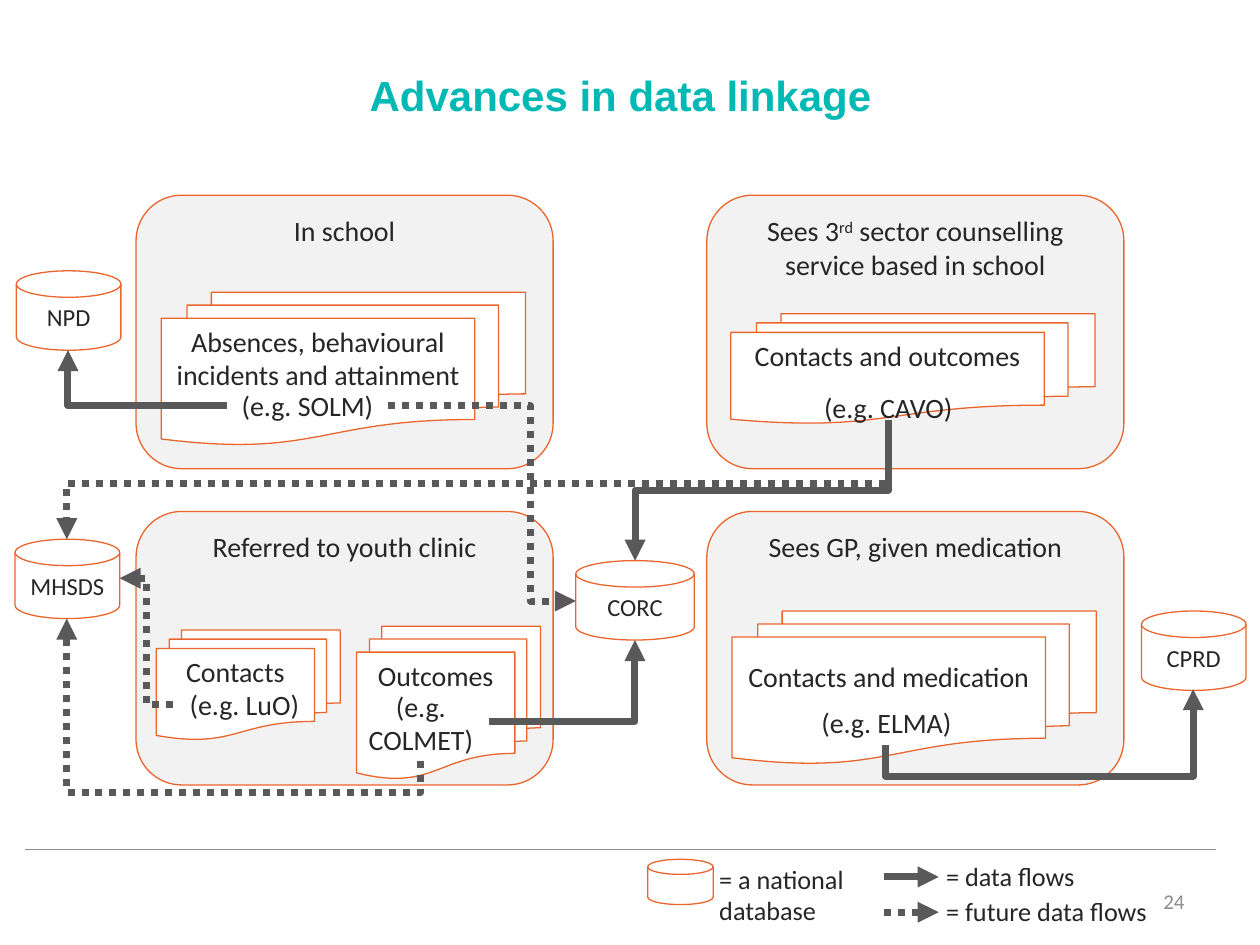
from lxml import etree
from pptx import Presentation
from pptx import util as u
from pptx.dml.color import RGBColor
from pptx.enum import dml, shapes, text
from pptx.oxml import ns

ORANGE = RGBColor(0xEA, 0x65, 0x2C)
TEAL = RGBColor(0x00, 0xB9, 0xB5)
INK = RGBColor(0x26, 0x26, 0x26)
FLOW = RGBColor(0x59, 0x59, 0x59)
MUTED = RGBColor(0x8C, 0x8C, 0x8C)
PANEL = RGBColor(0xF2, 0xF2, 0xF2)
WHITE = RGBColor(0xFF, 0xFF, 0xFF)

KIND = shapes.MSO_SHAPE
ALIGN = text.PP_ALIGN
ANCHOR = text.MSO_ANCHOR
PANEL_SIZE = (3.31, 2.17)
DISK_SIZE = (0.83, 0.63)
INSET = 0.04


def write(box, content, size=16, colour=INK, font="Calibri", bold=False,
          align=ALIGN.CENTER, anchor=ANCHOR.TOP, inset=(INSET,) * 4):
    frame = box.text_frame
    frame.word_wrap = True
    frame.vertical_anchor = anchor
    (frame.margin_left, frame.margin_top,
     frame.margin_right, frame.margin_bottom) = map(u.Inches, inset)
    para = frame.paragraphs[0]
    para.alignment = align
    spans = [content] if isinstance(content, str) else content
    for index, words in enumerate(spans):
        span = para.add_run()
        span.text = words
        span.font.name = font
        span.font.size = u.Pt(size)
        span.font.bold = bold
        span.font.color.rgb = colour
        if index == 1:
            span.font._element.set("baseline", "30000")


def add_label(page, place, content, **style):
    box = page.shapes.add_textbox(*map(u.Inches, place))
    write(box, content, **style)


def add_outline(page, kind, place, fill=None):
    shape = page.shapes.add_shape(kind, *map(u.Inches, place))
    shape.shadow.inherit = False
    if fill is None:
        shape.fill.background()
    else:
        shape.fill.solid()
        shape.fill.fore_color.rgb = fill
    shape.line.color.rgb = ORANGE
    shape.line.width = u.Pt(0.75)
    return shape


def add_panel(page, corner, heading):
    shape = add_outline(page, KIND.ROUNDED_RECTANGLE, corner + PANEL_SIZE, PANEL)
    write(shape, heading)


def add_records(page, place, content, top=0.05):
    shape = add_outline(page, KIND.FLOWCHART_MULTIDOCUMENT, place, WHITE)
    write(shape, content, inset=(INSET, top, INSET, INSET))


def add_database(page, place, name):
    shape = add_outline(page, KIND.FLOWCHART_MAGNETIC_DISK, place)
    write(shape, name, size=14, anchor=ANCHOR.MIDDLE)


def add_line(page, start, end, colour=FLOW, width=4, future=False,
             arrow=True, kind=shapes.MSO_CONNECTOR.STRAIGHT):
    line = page.shapes.add_connector(kind, *map(u.Inches, start + end))
    line.line.color.rgb = colour
    line.line.width = u.Pt(width)
    if future:
        line.line.dash_style = dml.MSO_LINE.ROUND_DOT
    if arrow:
        tail = etree.SubElement(line.line._get_or_add_ln(), ns.qn("a:tailEnd"))
        tail.set("type", "triangle")
    etree.SubElement(line._element.spPr, ns.qn("a:effectLst"))
    return line


def add_elbow(page, start, end, bend=None, vertical=False, future=False):
    origin, target = start, end
    if vertical:
        middle_x, middle_y = (start[0] + end[0]) / 2, (start[1] + end[1]) / 2
        half_x, half_y = (end[1] - start[1]) / 2, (start[0] - end[0]) / 2
        origin = (middle_x - half_x, middle_y - half_y)
        target = (middle_x + half_x, middle_y + half_y)
    line = add_line(page, origin, target, future=future,
                    kind=shapes.MSO_CONNECTOR.ELBOW)
    properties = line._element.spPr
    if vertical:
        properties.find(ns.qn("a:xfrm")).set("rot", "5400000")
    geometry = properties.find(ns.qn("a:prstGeom"))
    if bend is None:
        geometry.set("prst", "bentConnector2")
        return
    axis = 1 if vertical else 0
    share = (bend - start[axis]) / (end[axis] - start[axis])
    guides = geometry.find(ns.qn("a:avLst"))
    if guides is None:
        guides = etree.SubElement(geometry, ns.qn("a:avLst"))
    guide = etree.SubElement(guides, ns.qn("a:gd"))
    guide.set("name", "adj1")
    guide.set("fmla", f"val {round(share * 100000)}")


def add_title(page, content):
    title = page.shapes.title
    title.left, title.top, title.width, title.height = map(
        u.Inches, (0.16, 0.13, 9.53, 1.25))
    write(title, content, size=24, colour=TEAL, font="Arial", bold=True,
          anchor=ANCHOR.MIDDLE, inset=(0.1, 0.05, 0.1, 0.05))


def add_legend(page):
    add_outline(page, KIND.FLOWCHART_MAGNETIC_DISK, (5.14, 6.82, 0.52, 0.36))
    entries = [
        ((5.61, 6.8, 1.39, 0.61), "= a national database"),
        ((7.41, 6.78, 2.05, 0.35), "= data flows"),
        ((7.41, 7.06, 2.05, 0.35), "= future data flows"),
    ]
    for place, meaning in entries:
        add_label(page, place, meaning, size=15, align=ALIGN.LEFT,
                  inset=(0.1, 0.05, 0.1, 0.05))
    for y, future in ((6.96, False), (7.24, True)):
        add_line(page, (7.02, y), (7.45, y), future=future)


def main():
    deck = Presentation()
    deck.slide_width, deck.slide_height = u.Inches(10), u.Inches(7.5)
    page = deck.slides.add_slide(deck.slide_layouts[5])
    add_title(page, "Advances in data linkage")
    add_line(page, (0.2, 6.74), (9.65, 6.74), colour=MUTED, width=0.75, arrow=False)

    left, right, upper, lower = 1.08, 5.61, 1.55, 4.06
    add_panel(page, (left, upper), "In school")
    add_panel(page, (right, upper),
              ["Sees 3", "rd", " sector counselling service based in school"])
    add_panel(page, (left, lower), "Referred to youth clinic")
    add_panel(page, (right, lower), "Sees GP, given medication")

    add_records(page, (1.28, 2.32, 2.89, 1.21),
                "Absences, behavioural incidents and attainment")
    add_records(page, (5.8, 2.49, 2.89, 0.87), "Contacts and outcomes")
    add_records(page, (1.24, 5, 1.46, 0.87), "Contacts")
    add_records(page, (2.83, 4.97, 1.46, 1.21), "Outcomes")
    add_records(page, (5.81, 4.85, 2.89, 1.21), "Contacts and medication", top=0.18)

    systems = [
        ((1.8, 3.04, 1.28, 0.35), "(e.g. SOLM)"),
        ((6.12, 3.06, 1.86, 0.35), "(e.g. CAVO)"),
        ((1.37, 5.42, 1.14, 0.35), "(e.g. LuO)"),
        ((2.8, 5.43, 1.08, 0.62), "(e.g. COLMET)"),
        ((6.42, 5.56, 1.23, 0.35), "(e.g. ELMA)"),
    ]
    for place, name in systems:
        add_label(page, place, name)

    add_database(page, (0.12, 4.28) + DISK_SIZE, "MHSDS")
    add_database(page, (0.13, 2.15) + DISK_SIZE, "NPD")
    add_database(page, (9.06, 4.85) + DISK_SIZE, "CPRD")
    add_database(page, (4.57, 4.45, 0.94, 0.63), "CORC")

    add_elbow(page, (3.34, 6.04), (0.53, 4.91), bend=6.29, vertical=True, future=True)
    add_elbow(page, (1.8, 3.22), (0.54, 2.78))
    add_elbow(page, (7.05, 3.41), (0.53, 4.28), bend=3.84, vertical=True, future=True)
    add_elbow(page, (7.03, 5.91), (9.47, 5.47), bend=6.16, vertical=True)
    add_elbow(page, (7.05, 3.33), (5.04, 4.45), bend=3.89, vertical=True)
    add_elbow(page, (3.88, 5.73), (5.04, 5.08))
    add_elbow(page, (1.37, 5.59), (0.95, 4.59), bend=1.16, future=True)
    add_elbow(page, (3.08, 3.22), (4.57, 4.77), bend=4.21, future=True)

    add_legend(page)
    add_label(page, (7.17, 6.95, 2.33, 0.4), "24", size=12, colour=MUTED,
              align=ALIGN.RIGHT, anchor=ANCHOR.MIDDLE, inset=(0.1, 0.05, 0.1, 0.05))
    deck.save("out.pptx")


if __name__ == "__main__":
    main()
